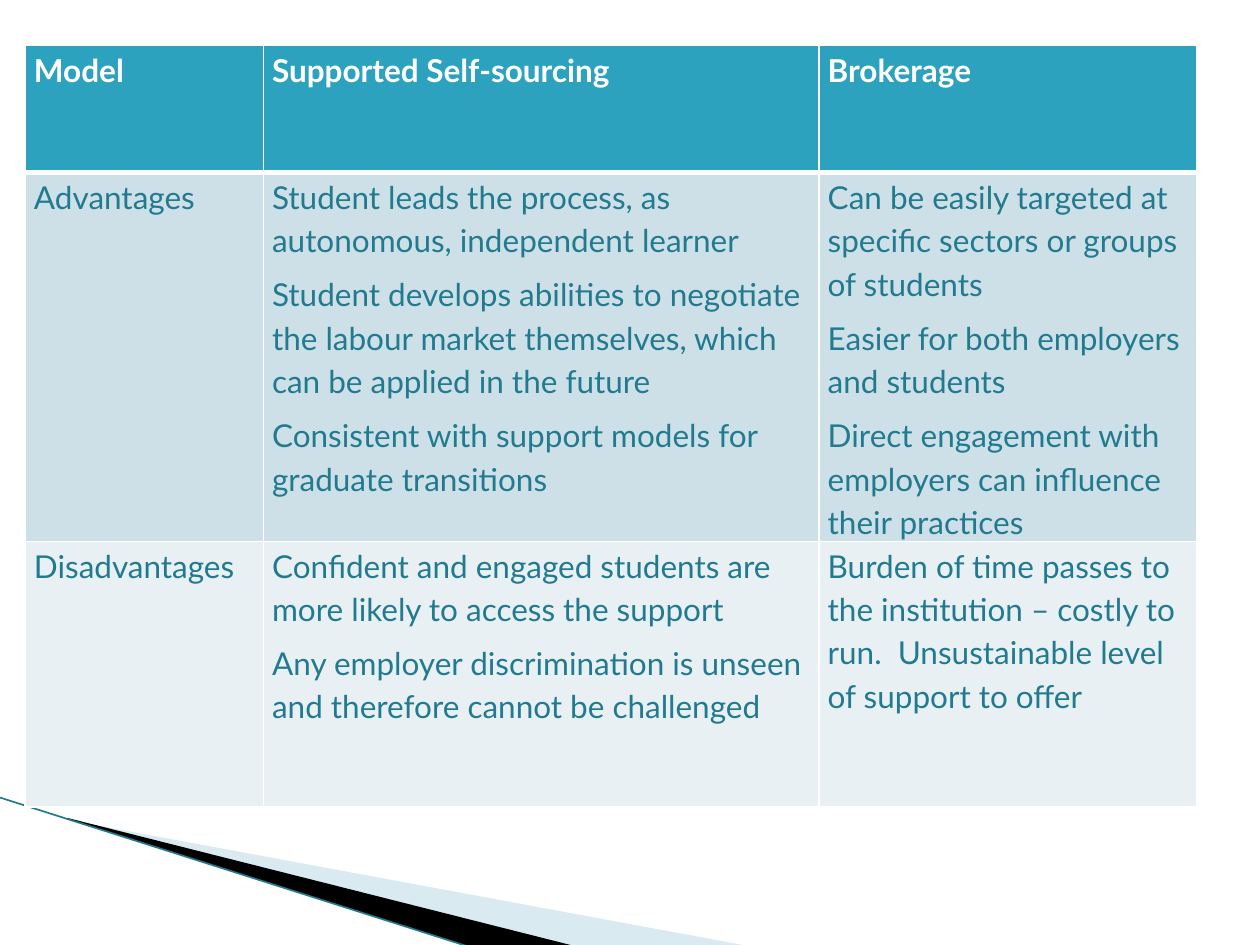
from lxml import etree
from pptx import Presentation
from pptx import util as u
from pptx.dml.color import RGBColor
from pptx.enum import shapes
from pptx.oxml.ns import qn

WHITE = RGBColor(0xFF, 0xFF, 0xFF)
BLACK = RGBColor(0x00, 0x00, 0x00)
TEAL = RGBColor(0x2D, 0xA2, 0xBF)
DARK_TEAL = RGBColor(0x22, 0x7A, 0x8F)
PALE_BLUE = RGBColor(0xA0, 0xCB, 0xDC)
ROW_BLUE = RGBColor(0xCD, 0xE0, 0xE8)
ROW_LIGHT = RGBColor(0xE8, 0xF0, 0xF4)
FONT = "Lato"

COLUMN_WIDTHS = [1.89, 4.41, 3]
ROW_HEIGHTS = [1.01, 2.87, 2.11]
ROW_FILLS = [TEAL, ROW_BLUE, ROW_LIGHT]
ROWS = [
    [["Model"], ["Supported Self-sourcing"], ["Brokerage"]],
    [
        ["Advantages"],
        [
            "Student leads the process, as autonomous, independent learner",
            "Student develops abilities to negotiate the labour market themselves, "
            "which can be applied in the future",
            "Consistent with support models for graduate transitions",
        ],
        [
            "Can be easily targeted at specific sectors or groups of students",
            "Easier for both employers and students",
            "Direct engagement with employers can influence their practices",
        ],
    ],
    [
        ["Disadvantages"],
        [
            "Confident and engaged students are more likely to access the support",
            "Any employer discrimination is unseen and therefore cannot be challenged",
        ],
        [
            "Burden of time passes to the institution – costly to run.  "
            "Unsustainable level of support to offer",
        ],
    ],
]


def write_text(frame, paragraphs, color, size=18, bold=False):
    for index, content in enumerate(paragraphs):
        paragraph = frame.paragraphs[0] if index == 0 else frame.add_paragraph()
        paragraph.line_spacing = 1.15
        paragraph.space_after = u.Pt(6)
        run = paragraph.add_run()
        run.text = content
        run.font.name = FONT
        run.font.size = u.Pt(size)
        run.font.bold = bold
        run.font.color.rgb = color


def add_borders(cell, bottom=1):
    properties = cell._tc.get_or_add_tcPr()
    for side, width in (("L", 1), ("R", 1), ("T", 1), ("B", bottom)):
        line = etree.SubElement(properties, qn(f"a:ln{side}"), w=str(u.Pt(width)))
        fill = etree.SubElement(line, qn("a:solidFill"))
        etree.SubElement(fill, qn("a:srgbClr"), val=str(WHITE))


def add_wedge(slide, left, top, points, color, opacity=None):
    corners = [(u.Inches(left + x), u.Inches(top + y)) for x, y in points]
    builder = slide.shapes.build_freeform(*corners[0])
    builder.add_line_segments(corners[1:], close=True)
    shape = builder.convert_to_shape()
    shape.shadow.inherit = False
    shape.fill.solid()
    shape.fill.fore_color.rgb = color
    shape.line.fill.background()
    if opacity is not None:
        color_element = shape._element.spPr.find(".//" + qn("a:srgbClr"))
        etree.SubElement(color_element, qn("a:alpha"), val=str(opacity * 1000))


def add_corner_sweep(slide, left, top, width, height):
    add_wedge(slide, left, top,
              [(0.55, 0.18), (width, height), (4.56, height), (0.55, 0.17)],
              PALE_BLUE, opacity=40)
    add_wedge(slide, left, top,
              [(0.53, 0.16), (4.57, height), (3.72, height), (0.54, 0.17)], BLACK)
    edge = slide.shapes.add_connector(
        shapes.MSO_CONNECTOR.STRAIGHT,
        u.Inches(left), u.Inches(top), u.Inches(left + 3.71), u.Inches(top + height))
    edge.line.color.rgb = DARK_TEAL
    edge.line.width = u.Pt(0.95)
    etree.SubElement(edge._element.spPr, qn("a:effectLst"))


def add_model_table(slide, left, top, width, height):
    table = slide.shapes.add_table(
        len(ROWS), len(COLUMN_WIDTHS), u.Inches(left), u.Inches(top),
        u.Inches(width), u.Inches(height)).table
    for column, column_width in zip(table.columns, COLUMN_WIDTHS):
        column.width = u.Inches(column_width)
    for row_index, (row, row_height) in enumerate(zip(table.rows, ROW_HEIGHTS)):
        row.height = u.Inches(row_height)
        header = row_index == 0
        for cell, paragraphs in zip(row.cells, ROWS[row_index]):
            cell.margin_left = cell.margin_right = u.Inches(0.07)
            cell.margin_top = cell.margin_bottom = 0
            add_borders(cell, bottom=3 if header else 1)
            cell.fill.solid()
            cell.fill.fore_color.rgb = ROW_FILLS[row_index]
            write_text(cell.text_frame, paragraphs,
                       color=WHITE if header else DARK_TEAL, bold=header)


def main():
    presentation = Presentation()
    presentation.slide_width = u.Inches(10)
    presentation.slide_height = u.Inches(7.5)
    slide = presentation.slides.add_slide(presentation.slide_layouts[6])
    add_corner_sweep(slide, 0, 6.33, 5.95, 1.18)
    add_model_table(slide, 0.2, 0.36, sum(COLUMN_WIDTHS), sum(ROW_HEIGHTS))
    presentation.save("out.pptx")


if __name__ == "__main__":
    main()
